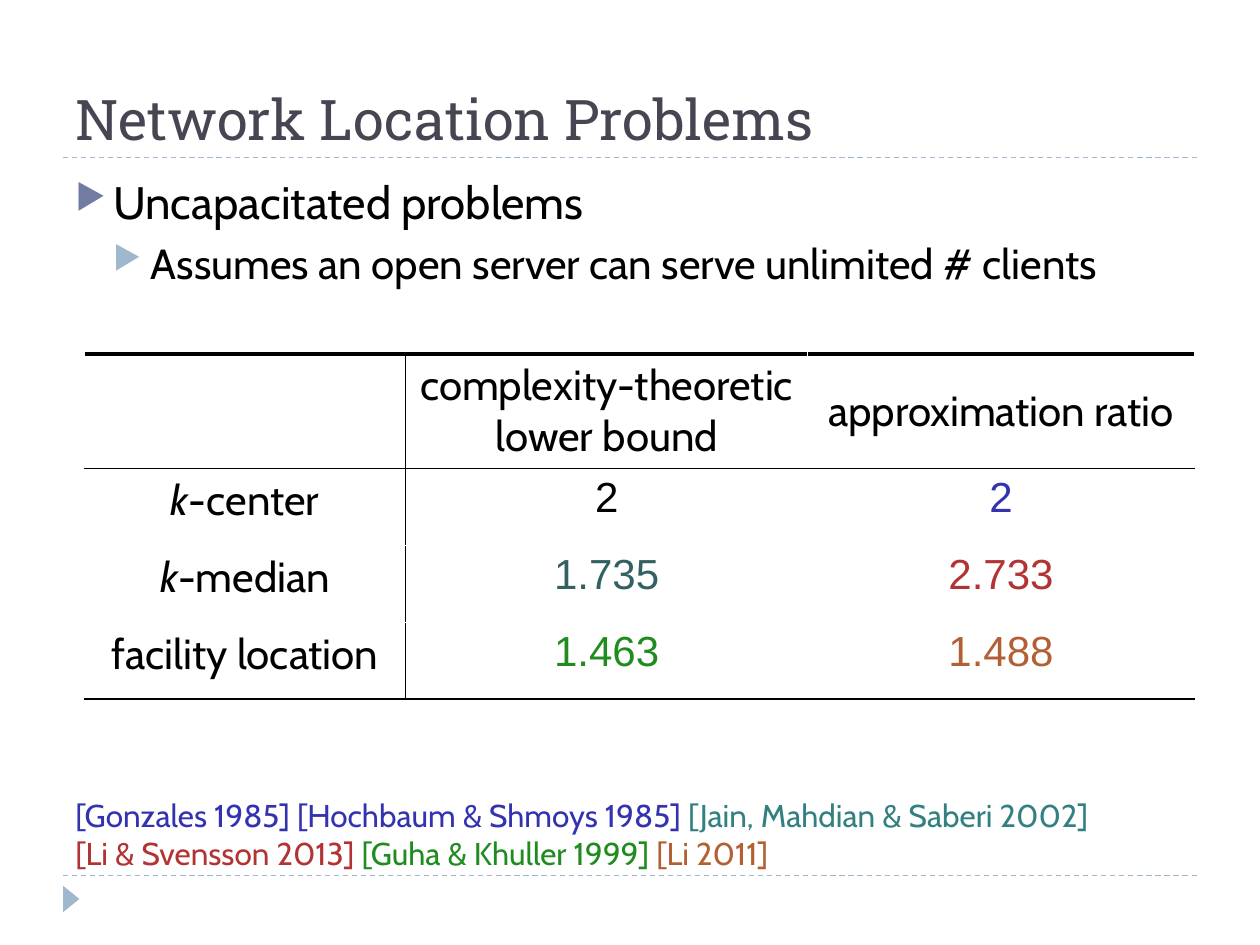
from lxml import etree
from pptx import Presentation
from pptx import util as u
from pptx.dml.color import RGBColor
from pptx.enum import dml, shapes, text
from pptx.oxml.ns import qn

Inches, Pt = u.Inches, u.Pt

BLACK = RGBColor(0x00, 0x00, 0x00)
WHITE = RGBColor(0xFF, 0xFF, 0xFF)
SLATE = RGBColor(0x46, 0x46, 0x53)
INDIGO = RGBColor(0x72, 0x7C, 0xA3)
SKY = RGBColor(0x9F, 0xB8, 0xCD)
BLUE = RGBColor(0x33, 0x33, 0xB2)
DARK_TEAL = RGBColor(0x33, 0x60, 0x60)
TEAL = RGBColor(0x33, 0x80, 0x80)
RED = RGBColor(0xB2, 0x33, 0x33)
GREEN = RGBColor(0x20, 0x8C, 0x20)
ORANGE = RGBColor(0xB2, 0x60, 0x33)

HEAD, BODY, FIGURES = "Roboto Slab", "Cabin", "Arial"


def add_run(p, words, color=BLACK, **formats):
    r = p.add_run()
    r.text = words
    r.font.color.rgb = color
    for name, value in formats.items():
        setattr(r.font, name, value)


def add_text_frame(s, box, anchor=text.MSO_ANCHOR.TOP):
    tf = s.shapes.add_textbox(*map(Inches, box)).text_frame
    tf.word_wrap = True
    tf.vertical_anchor = anchor
    return tf


def add_child(parent, tag, **attributes):
    return etree.SubElement(parent, qn(tag), attributes)


def add_color(parent, color):
    add_child(parent, "a:srgbClr", val=str(color))


def add_rule(s, left, top, width):
    line = s.shapes.add_connector(
        shapes.MSO_CONNECTOR.STRAIGHT,
        Inches(left), Inches(top), Inches(left + width), Inches(top))
    line.line.color.rgb = SKY
    line.line.width = Pt(0.75)
    line.line.dash_style = dml.MSO_LINE.DASH
    add_child(line._element.spPr, "a:effectLst")


def add_footer_marker(s, box):
    sp = s.shapes.add_shape(shapes.MSO_SHAPE.ISOSCELES_TRIANGLE, *map(Inches, box))
    sp.rotation = 90
    sp.shadow.inherit = False
    sp.fill.solid()
    sp.fill.fore_color.rgb = SKY
    sp.line.fill.background()


def add_title(s, box, words):
    tf = add_text_frame(s, box, text.MSO_ANCHOR.BOTTOM)
    add_run(tf.paragraphs[0], words, SLATE, size=Pt(32), name=HEAD)


def add_bullets(s, box, items):
    tf = add_text_frame(s, box)
    for level, (words, size, before, color) in enumerate(items):
        p = tf.paragraphs[0] if level == 0 else tf.add_paragraph()
        p.level = level
        p.space_before = Pt(before)
        pPr = p._p.get_or_add_pPr()
        pPr.set("marL", str(Inches(0.3 * (level + 1))))
        pPr.set("indent", str(Inches(-0.3)))
        add_color(add_child(pPr, "a:buClr"), color)
        add_child(pPr, "a:buSzPct", val="76000")
        add_child(pPr, "a:buChar", char="▶")
        add_run(p, words, size=Pt(size), name=BODY)


def set_borders(cell, **sides):
    """Draw the borders; sides maps L, R, T, B to (color, points)."""
    tcPr = cell._tc.get_or_add_tcPr()
    for side, (color, width) in sides.items():
        ln = add_child(tcPr, "a:ln" + side, w=str(Pt(width)))
        add_color(add_child(ln, "a:solidFill"), color)


def add_bounds_table(s, box, widths, heights, rows):
    frame = s.shapes.add_table(len(rows), len(widths), *map(Inches, box))
    table = frame.table
    table.first_row = table.horz_banding = False
    for column, width in zip(table.columns, widths):
        column.width = Inches(width)
    for row, height in zip(table.rows, heights):
        row.height = Inches(height)

    thin, thick, hidden = (BLACK, 1), (BLACK, 2.25), (WHITE, 1)
    last = len(rows) - 1
    for i, row in enumerate(rows):
        for j, lines in enumerate(row):
            cell = table.cell(i, j)
            set_borders(
                cell,
                L=thin if j == 1 else hidden,
                R=thin if j == 0 else hidden,
                T=thick if i == 0 else thin if i == 1 else hidden,
                B=thin if i in (0, last) else hidden)
            cell.fill.background()
            if i == 0:
                cell.vertical_anchor = text.MSO_ANCHOR.MIDDLE
            for n, runs in enumerate(lines):
                tf = cell.text_frame
                p = tf.paragraphs[0] if n == 0 else tf.add_paragraph()
                p.alignment = text.PP_ALIGN.CENTER
                for words, formats in runs:
                    add_run(p, words, **{"size": Pt(24), "name": BODY, **formats})


def label(words, **formats):
    return [(words, formats)]


def figure(words, color=BLACK):
    return [label(words, color=color, name=FIGURES)]


def k_problem(name):
    return [label("k", italic=True) + label(name)]


def add_references(s, box, lines):
    tf = add_text_frame(s, box)
    for n, runs in enumerate(lines):
        p = tf.paragraphs[0] if n == 0 else tf.add_paragraph()
        for words, color in runs:
            add_run(p, words, color, size=Pt(18), name=BODY)


def main():
    prs = Presentation()
    prs.slide_width, prs.slide_height = Inches(10), Inches(7.5)
    s = prs.slides.add_slide(prs.slide_layouts[6])

    # Frame of the page
    for top in (6.95, 1.25):
        add_rule(s, 0.5, top, 9)
    add_footer_marker(s, (0.46, 7.07, 0.21, 0.13))

    # Title and main points
    add_title(s, (0.5, 0.17, 9, 1.08), "Network Location Problems")
    add_bullets(s, (0.5, 1.33, 9, 5.4), [
        ("Uncapacitated problems", 26, 6, INDIGO),
        ("Assumes an open server can serve unlimited # clients", 24, 5, SKY),
    ])

    # Known bounds for each problem
    add_bounds_table(s, (0.67, 2.81, 8.81, 2.74), (2.55, 3.19, 3.07),
                     (0.91, 0.61, 0.61, 0.61), [
        [[], [label("complexity-theoretic"), label("lower bound")],
         [label("approximation ratio")]],
        [k_problem("-center"), figure("2"), figure("2", BLUE)],
        [k_problem("-median"), figure("1.735", DARK_TEAL), figure("2.733", RED)],
        [[label("facility location")], figure("1.463", GREEN),
         figure("1.488", ORANGE)],
    ])

    # References, coloured like the results they prove
    add_references(s, (0.5, 6.27, 8.99, 0.71), [
        [("[Gonzales 1985] [Hochbaum & Shmoys 1985] ", BLUE),
         ("[Jain, Mahdian & Saberi 2002]", TEAL)],
        [("[Li & Svensson 2013] ", RED), ("[Guha & Khuller 1999] ", GREEN),
         ("[Li 2011]", ORANGE)],
    ])
    prs.save("out.pptx")


if __name__ == "__main__":
    main()
